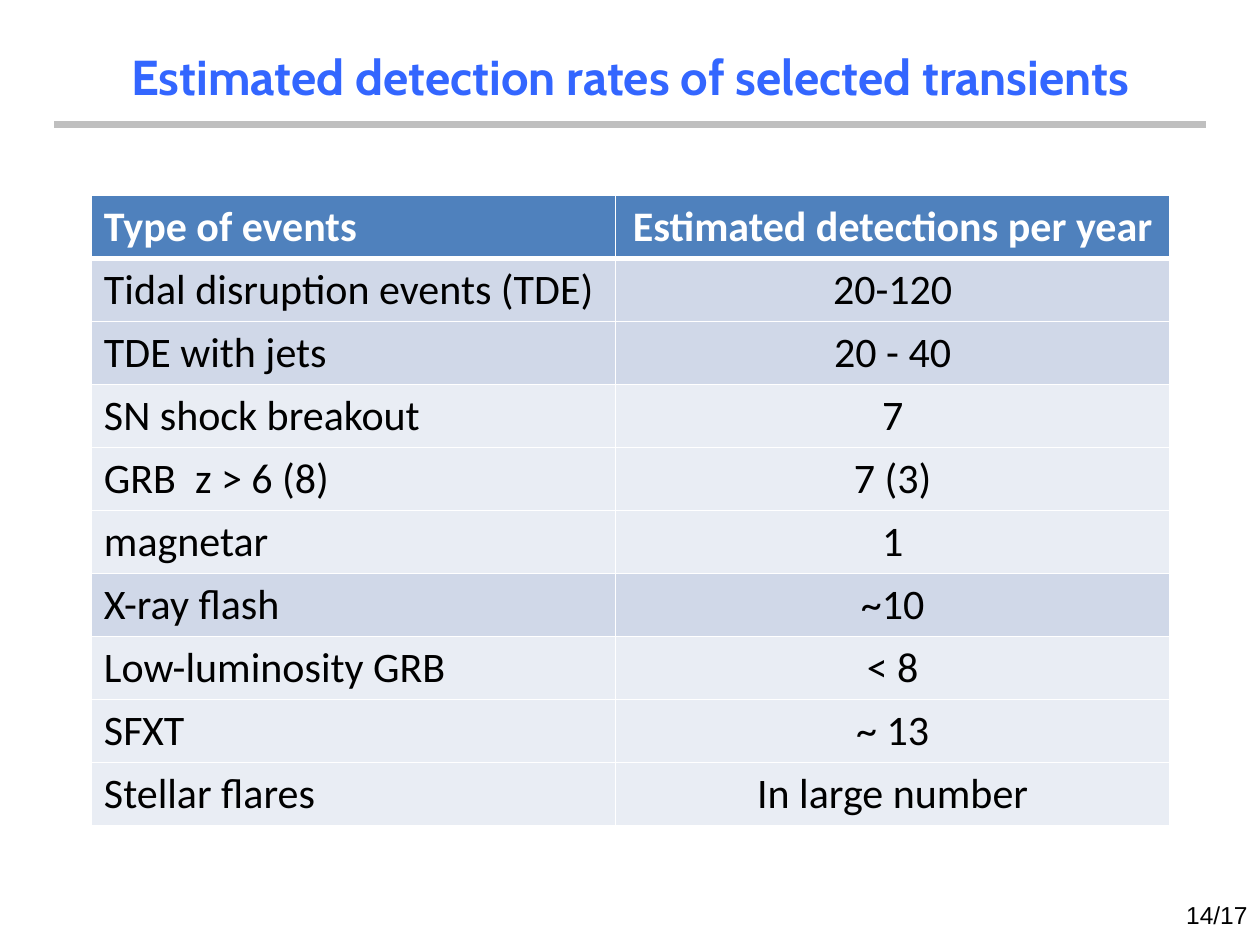
import dataclasses
import typing

import lxml.etree
import pptx
import pptx.dml.color
import pptx.enum.shapes
import pptx.enum.text
import pptx.oxml.ns
import pptx.util

Pt = pptx.util.Pt
ALIGN = pptx.enum.text.PP_ALIGN
ANCHOR = pptx.enum.text.MSO_ANCHOR
qn = pptx.oxml.ns.qn

COLOURS = {
    "title": "3366FF",
    "rule": "BFBFBF",
    "header": "4F81BD",
    "dark": "D0D8E8",
    "light": "E9EDF4",
    "white": "FFFFFF",
    "black": "000000",
}
TITLE_FONT = {"name": "Cabin", "size": Pt(28), "bold": True}
NUMBER_FONT = {"name": "Arial", "size": Pt(14), "bold": False}
HEADER_FONT = {"name": "Calibri", "size": Pt(24), "bold": True}
BODY_FONT = {**HEADER_FONT, "bold": False}
BOX_FORMAT = {
    "word_wrap": True,
    "margin_left": Pt(7.2),
    "margin_right": Pt(7.2),
    "margin_top": Pt(3.6),
    "margin_bottom": Pt(3.6),
}
TABLE_LEFT, TABLE_TOP = 52.2, 111.6
COLUMN_WIDTHS = (299.5, 316.8)
ROW_HEIGHT = 36


@dataclasses.dataclass
class Label:
    text: str
    left: float
    top: float
    width: float
    height: float
    align: ALIGN
    anchor: ANCHOR
    font: dict
    colour: str


@dataclasses.dataclass
class EventRate:
    event: str
    rate: str
    shade: str = "light"


LABELS = (
    Label("Estimated detection rates of selected transients", 36, 21.6, 648, 43.9,
          ALIGN.CENTER, ANCHOR.MIDDLE, TITLE_FONT, "title"),
    Label("14/17", 552.2, 510.5, 167.8, 26.6,
          ALIGN.RIGHT, ANCHOR.TOP, NUMBER_FONT, "black"),
)
RATES = (
    EventRate("Type of events", "Estimated detections per year", "header"),
    EventRate("Tidal disruption events (TDE)", "20-120", "dark"),
    EventRate("TDE with jets", "20 - 40", "dark"),
    EventRate("SN shock breakout", "7"),
    EventRate("GRB  z > 6 (8)", "7 (3)"),
    EventRate("magnetar", "1"),
    EventRate("X-ray flash", "~10", "dark"),
    EventRate("Low-luminosity GRB", "< 8"),
    EventRate("SFXT", "~ 13"),
    EventRate("Stellar flares", "In large number"),
)


def rgb(name: str) -> pptx.dml.color.RGBColor:
    return pptx.dml.color.RGBColor.from_string(COLOURS[name])


def apply_format(target: typing.Any, values: dict) -> None:
    for name, value in values.items():
        setattr(target, name, value)


def write_text(frame: typing.Any, text: str, align: ALIGN, font: dict, colour: str) -> None:
    para = frame.paragraphs[0]
    para.alignment = align
    span = para.add_run()
    span.text = text
    apply_format(span.font, font)
    span.font.color.rgb = rgb(colour)


def draw_label(page: typing.Any, label: Label) -> None:
    box = page.shapes.add_textbox(
        Pt(label.left), Pt(label.top), Pt(label.width), Pt(label.height))
    apply_format(box.text_frame, {**BOX_FORMAT, "vertical_anchor": label.anchor})
    write_text(box.text_frame, label.text, label.align, label.font, label.colour)


def draw_rule(page: typing.Any) -> None:
    rule = page.shapes.add_connector(
        pptx.enum.shapes.MSO_CONNECTOR.STRAIGHT, Pt(31), Pt(71.3), Pt(689), Pt(71.3))
    rule.line.width = Pt(4)
    rule.line.color.rgb = rgb("rule")
    lxml.etree.SubElement(rule._element.spPr, qn("a:effectLst"))


def add_borders(cell: typing.Any, widths: dict[str, float]) -> None:
    properties = cell._tc.get_or_add_tcPr()
    for side, width in widths.items():
        border = lxml.etree.SubElement(properties, qn(f"a:ln{side}"), w=str(Pt(width)))
        fill = lxml.etree.SubElement(border, qn("a:solidFill"))
        lxml.etree.SubElement(fill, qn("a:srgbClr"), val=COLOURS["white"])


def draw_table(page: typing.Any, rates: tuple[EventRate, ...]) -> None:
    table = page.shapes.add_table(
        len(rates), len(COLUMN_WIDTHS), Pt(TABLE_LEFT), Pt(TABLE_TOP),
        Pt(sum(COLUMN_WIDTHS)), Pt(ROW_HEIGHT * len(rates))).table
    for column, width in zip(table.columns, COLUMN_WIDTHS):
        column.width = Pt(width)
    for index, rate in enumerate(rates):
        table.rows[index].height = Pt(ROW_HEIGHT)
        header = index == 0
        font, colour = (HEADER_FONT, "white") if header else (BODY_FONT, "black")
        widths = {"L": 1, "R": 1, "T": 3 if index == 1 else 1, "B": 3 if header else 1}
        entries = ((rate.event, ALIGN.LEFT), (rate.rate, ALIGN.CENTER))
        for cell, (text, align) in zip(table.rows[index].cells, entries):
            add_borders(cell, widths)
            cell.fill.solid()
            cell.fill.fore_color.rgb = rgb(rate.shade)
            write_text(cell.text_frame, text, align, font, colour)


def main() -> None:
    deck = pptx.Presentation()
    apply_format(deck, {"slide_width": Pt(720), "slide_height": Pt(540)})
    page = deck.slides.add_slide(deck.slide_layouts[6])
    draw_rule(page)
    for label in LABELS:
        draw_label(page, label)
    draw_table(page, RATES)
    deck.save("out.pptx")


if __name__ == "__main__":
    main()
